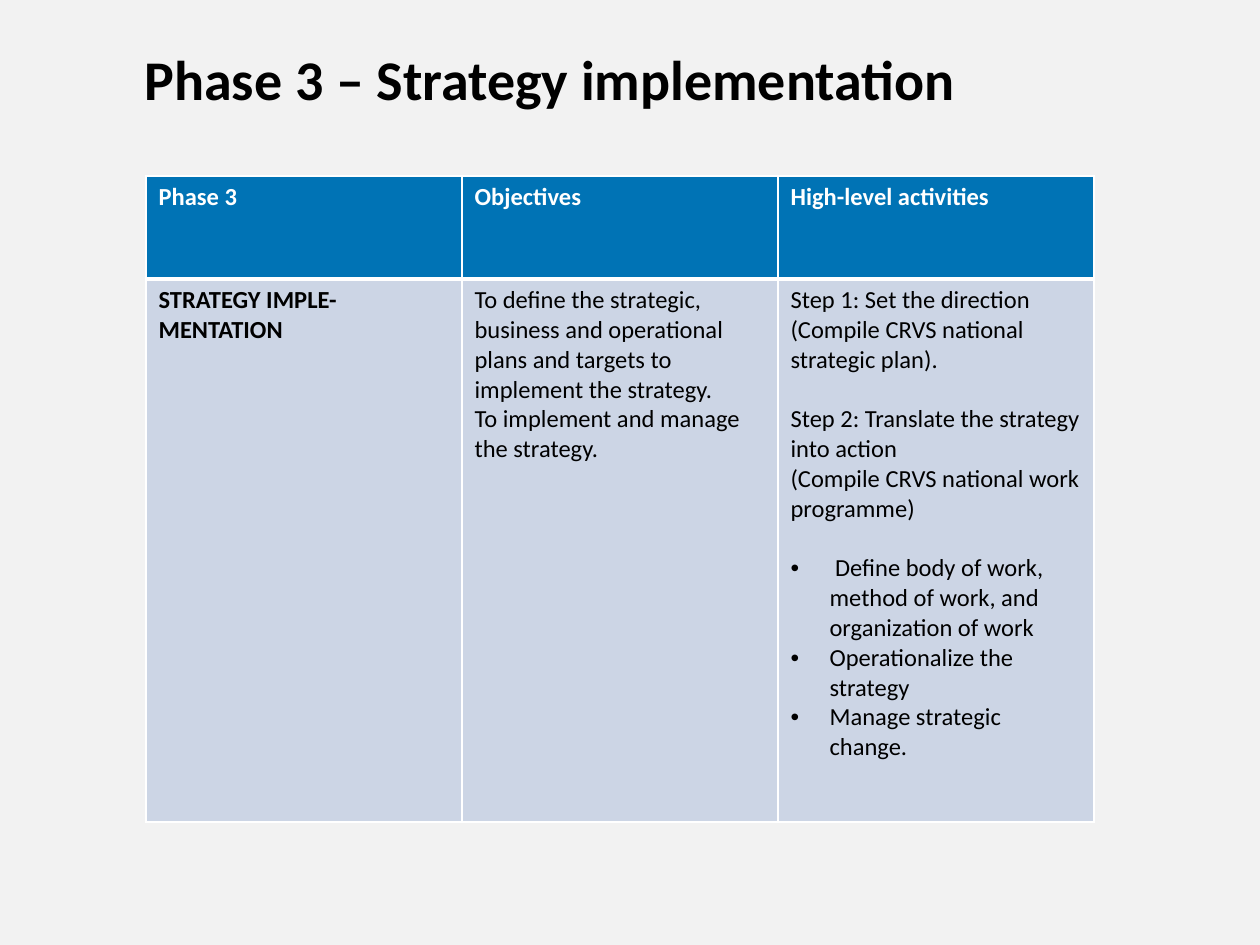
from lxml.etree import SubElement
from pptx import Presentation
from pptx.dml.color import RGBColor
from pptx.enum.text import MSO_AUTO_SIZE
from pptx.oxml.ns import qn
from pptx.util import Pt

PX = 914400 // 126
FONT = "Calibri"
BLACK = RGBColor(0x00, 0x00, 0x00)
WHITE = RGBColor(0xFF, 0xFF, 0xFF)
BLUE = RGBColor(0x00, 0x73, 0xB5)
PALE = RGBColor(0xCC, 0xD5, 0xE5)
GREY = RGBColor(0xF2, 0xF2, 0xF2)

TITLE = "Phase 3 – Strategy implementation"
HEADERS = ["Phase 3", "Objectives", "High-level activities"]
PLAIN, GAP, BULLET, GAP_BULLET = "plain", "gap", "bullet", "gap bullet"
BODY = [
    [("STRATEGY IMPLE-MENTATION", PLAIN)],
    [
        ("To define the strategic, business and operational plans and targets "
         "to implement the strategy.", PLAIN),
        ("To implement and manage the strategy.", PLAIN),
    ],
    [
        ("Step 1: Set the direction", PLAIN),
        ("(Compile CRVS national strategic plan).", PLAIN),
        ("Step 2: Translate the strategy into action", GAP),
        ("(Compile CRVS national work programme)", PLAIN),
        (" Define body of work, method of work, and organization of work", GAP_BULLET),
        ("Operationalize the strategy", BULLET),
        ("Manage strategic change.", BULLET),
    ],
]
TABLE_LEFT, TABLE_TOP, COLUMN_WIDTH = 146, 176, 316
ROW_HEIGHTS = [103, 543]
INDENT = 39


def format_runs(para, size, color, bold):
    for span in para.runs:
        span.font.name = FONT
        span.font.size = Pt(size)
        span.font.bold = bold
        span.font.color.rgb = color


def add_bullet(para):
    properties = para._p.get_or_add_pPr()
    properties.set("marL", str(INDENT * PX))
    properties.set("indent", str(-INDENT * PX))
    SubElement(properties, qn("a:buFont"), typeface="Arial")
    SubElement(properties, qn("a:buChar"), char="•")


def style_cell(cell, fill, top, bottom):
    properties = cell._tc.get_or_add_tcPr()
    for side, width in (("L", 1), ("R", 1), ("T", top), ("B", bottom)):
        line = SubElement(properties, qn(f"a:ln{side}"), w=str(Pt(width)))
        solid = SubElement(line, qn("a:solidFill"))
        SubElement(solid, qn("a:srgbClr"), val=str(WHITE))
    cell.fill.solid()
    cell.fill.fore_color.rgb = fill


def fill_cell(cell, lines, color, bold):
    frame = cell.text_frame
    frame.text = "\n".join(text for text, kind in lines)
    for para, (text, kind) in zip(frame.paragraphs, lines):
        if kind in (BULLET, GAP_BULLET):
            add_bullet(para)
        if kind in (GAP, GAP_BULLET):
            para.space_before = Pt(17)
        format_runs(para, 14, color, bold)


def add_title(page):
    box = page.shapes.add_textbox(132 * PX, 38 * PX, 917 * PX, 81 * PX)
    frame = box.text_frame
    frame.word_wrap = True
    frame.auto_size = MSO_AUTO_SIZE.SHAPE_TO_FIT_TEXT
    frame.text = TITLE
    format_runs(frame.paragraphs[0], 32, BLACK, True)


def add_phase_table(page):
    count = len(HEADERS)
    table = page.shapes.add_table(
        len(ROW_HEIGHTS), count, TABLE_LEFT * PX, TABLE_TOP * PX,
        count * COLUMN_WIDTH * PX, sum(ROW_HEIGHTS) * PX).table
    for row, height in zip(table.rows, ROW_HEIGHTS):
        row.height = height * PX
    for index, (header, lines) in enumerate(zip(HEADERS, BODY)):
        table.columns[index].width = COLUMN_WIDTH * PX
        head, body = table.cell(0, index), table.cell(1, index)
        style_cell(head, BLUE, 1, 3)
        fill_cell(head, [(header, PLAIN)], WHITE, True)
        style_cell(body, PALE, 3, 1)
        fill_cell(body, lines, BLACK, index == 0)


def main():
    deck = Presentation()
    deck.slide_width, deck.slide_height = 1260 * PX, 945 * PX
    page = deck.slides.add_slide(deck.slide_layouts[6])
    page.background.fill.solid()
    page.background.fill.fore_color.rgb = GREY
    add_title(page)
    add_phase_table(page)
    deck.save("out.pptx")


if __name__ == "__main__":
    main()
